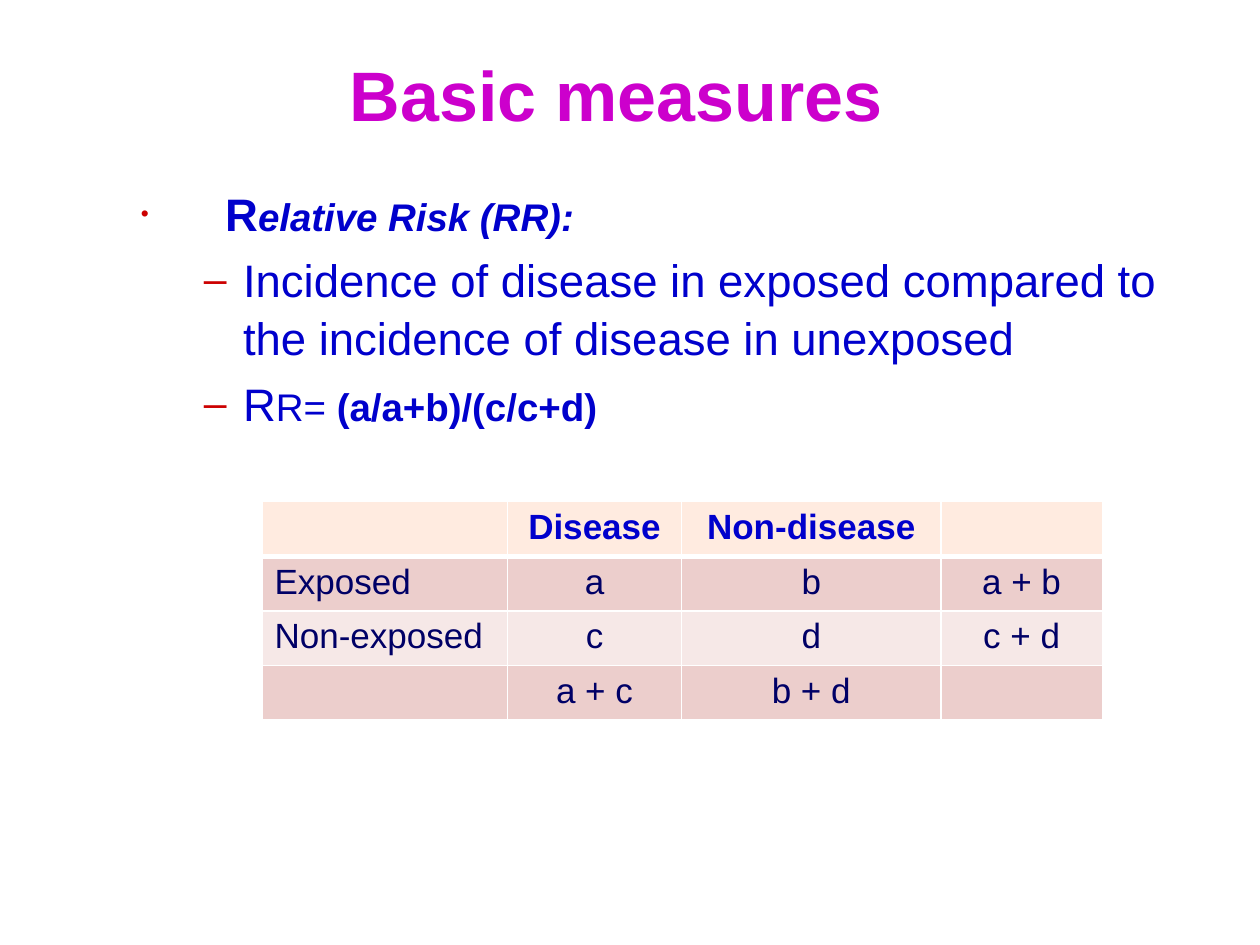
import dataclasses

import pptx
import pptx.dml.color
import pptx.enum.text
import pptx.oxml
import pptx.oxml.ns
import pptx.util

Cm = pptx.util.Cm
Pt = pptx.util.Pt
Align = pptx.enum.text.PP_ALIGN
Anchor = pptx.enum.text.MSO_ANCHOR
SPACE = pptx.oxml.ns.nsdecls("a")


@dataclasses.dataclass(frozen=True)
class Theme:
    font: str = "Arial"
    title: str = "CC00CC"
    blue: str = "0000CC"
    navy: str = "000066"
    red: str = "CC0000"
    white: str = "FFFFFF"
    head: str = "FFEBE0"
    dark: str = "ECCECC"
    light: str = "F6E8E7"
    huge: int = 40
    large: int = 26
    mid: int = 22
    small: int = 20


THEME = Theme()


def color(value):
    return pptx.dml.color.RGBColor.from_string(value)


def write(para, text, size=THEME.large, tint=THEME.blue, bold=False, italic=False):
    run = para.add_run()
    run.text = text
    font = run.font
    font.name, font.size = THEME.font, Pt(size)
    font.bold, font.italic = bold, italic
    font.color.rgb = color(tint)


def frame(slide, box):
    text = slide.shapes.add_textbox(*map(Cm, box)).text_frame
    text.word_wrap = True
    return text


def bullet(para, mark, scale, left, hang):
    props = para._p.get_or_add_pPr()
    props.set("marL", str(Cm(left)))
    props.set("indent", str(-Cm(hang)))
    for part in (
        f'<a:buClr {SPACE}><a:srgbClr val="{THEME.red}"/></a:buClr>',
        f'<a:buSzPct {SPACE} val="{scale * 1000}"/>',
        f'<a:buFont {SPACE} typeface="{THEME.font}"/>',
        f'<a:buChar {SPACE} char="{mark}"/>',
    ):
        props.append(pptx.oxml.parse_xml(part))


def title(slide, box):
    text = frame(slide, box)
    text.vertical_anchor = Anchor.MIDDLE
    text.margin_top, text.margin_bottom = 0, Cm(1.52)
    text.margin_right = Cm(0.65)
    para = text.paragraphs[0]
    para.alignment = Align.CENTER
    write(para, "Basic measures", size=THEME.huge, tint=THEME.title, bold=True)


def body(slide, box):
    text = frame(slide, box)
    top = ("•", 50, 1.7, 1.7)
    sub = ("–", 90, 2.06, 0.79)
    items = [
        (0, top, [("R", dict(bold=True)),
                  ("elative Risk (RR):", dict(size=THEME.mid, bold=True, italic=True))]),
        (1, sub, [("Incidence of disease in exposed compared to "
                   "the incidence of disease in unexposed", {})]),
        (1, sub, [("R", {}), ("R= ", dict(size=THEME.mid)),
                  ("(a/a+b)/(c/c+d)", dict(size=THEME.mid, bold=True))]),
    ]
    for i, (level, style, runs) in enumerate(items):
        para = text.add_paragraph() if i else text.paragraphs[0]
        para.level = level
        bullet(para, *style)
        para.line_spacing = 1.05
        para.space_before = Pt(5 if i else 0)
        for words, form in runs:
            write(para, words, **form)


def border(cell, top, bottom):
    props = cell._tc.get_or_add_tcPr()
    for i, (side, width) in enumerate(zip("LRTB", (1, 1, top, bottom))):
        line = pptx.oxml.parse_xml(
            f'<a:ln{side} {SPACE} w="{Pt(width)}"><a:solidFill>'
            f'<a:srgbClr val="{THEME.white}"/></a:solidFill></a:ln{side}>')
        props.insert(i, line)


def grid(slide, box):
    rows = [
        ("", "Disease", "Non-disease", ""),
        ("Exposed", "a", "b", "a + b"),
        ("Non-exposed", "c", "d", "c + d"),
        ("", "a + c", "b + d", ""),
    ]
    fills = (THEME.head, THEME.dark, THEME.light, THEME.dark)
    widths = (4.95, 3.51, 5.23, 3.25)
    table = slide.shapes.add_table(len(rows), len(widths), *map(Cm, box)).table
    table.horz_banding = False
    for column, width in zip(table.columns, widths):
        column.width = Cm(width)
    for r, (row, fill) in enumerate(zip(rows, fills)):
        for c, words in enumerate(row):
            cell = table.cell(r, c)
            cell.fill.solid()
            cell.fill.fore_color.rgb = color(fill)
            border(cell, 3 if r == 1 else 1, 3 if r == 0 else 1)
            if words:
                para = cell.text_frame.paragraphs[0]
                para.alignment = Align.CENTER if c else Align.LEFT
                write(para, words, size=THEME.small, bold=r == 0,
                      tint=THEME.navy if r else THEME.blue)


def main():
    deck = pptx.Presentation()
    deck.slide_width, deck.slide_height = Cm(25.4), Cm(19.05)
    slide = deck.slides.add_slide(deck.slide_layouts[6])
    title(slide, (1.19, 1.55, 22.86, 2.21))
    body(slide, (2.59, 3.58, 21.51, 13.18))
    grid(slide, (5.28, 10.11, 16.94, 4.12))
    deck.save("out.pptx")


if __name__ == "__main__":
    main()
